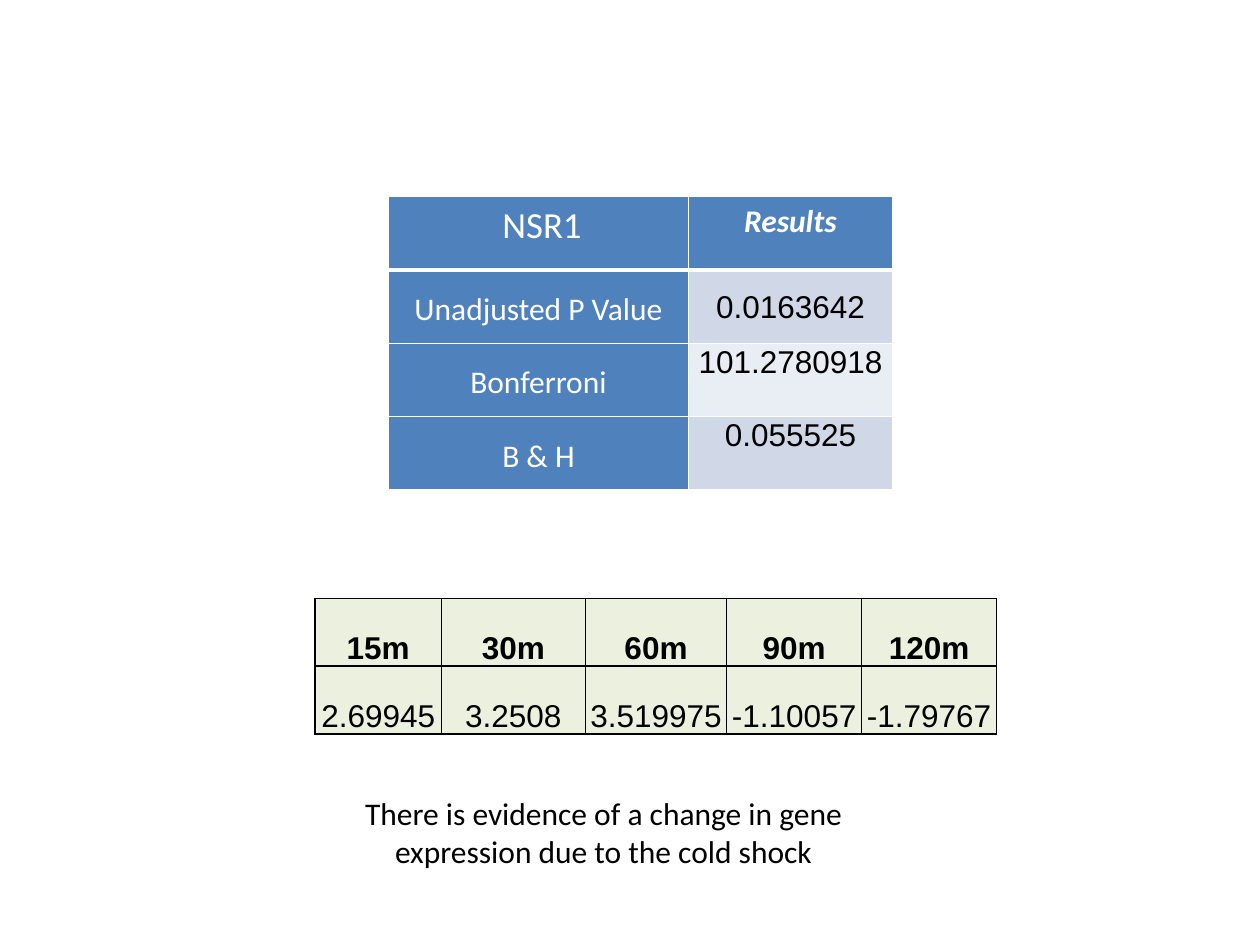
import pptx
import pptx.util
import pptx.oxml
import pptx.oxml.ns
from pptx.dml.color import RGBColor
from pptx.enum.text import MSO_ANCHOR, PP_ALIGN
from pptx.util import Cm, Pt

WHITE = RGBColor(0xFF, 0xFF, 0xFF)
BLACK = RGBColor(0x00, 0x00, 0x00)
BLUE = RGBColor(0x4F, 0x81, 0xBD)
BAND_DARK = RGBColor(0xD0, 0xD8, 0xE8)
BAND_LIGHT = RGBColor(0xE9, 0xED, 0xF4)
GREEN = RGBColor(0xEB, 0xF1, 0xDE)

LABEL_INSETS = (0.18, 0, 0.18, 0)
VALUE_INSETS = (0.03, 0.03, 0.03, 0)


class Deck:
    def __init__(self, width, height):
        self.prs = pptx.Presentation()
        self.prs.slide_width, self.prs.slide_height = Cm(width), Cm(height)
        self.s = self.prs.slides.add_slide(self.prs.slide_layouts[6])

    def run(self, p, text, font="Calibri", size=18, color=BLACK, bold=False, italic=False):
        r = p.add_run()
        r.text = text
        f = r.font
        f.name, f.size, f.bold, f.italic = font, Pt(size), bold, italic
        f.color.rgb = color

    def table(self, left, top, widths, row_height, rows):
        shape = self.s.shapes.add_table(rows, len(widths), Cm(left), Cm(top),
                                        Cm(sum(widths)), Cm(row_height * rows))
        tbl = shape.table
        for col, width in zip(tbl.columns, widths):
            col.width = Cm(width)
        for row in tbl.rows:
            row.height = Cm(row_height)
        return tbl

    def cell(self, cell, fill, line, anchor, insets, spacing=1.0, bottom=1):
        """Style a table cell and return its centred paragraph."""
        for side, width in (("L", 1), ("R", 1), ("T", 1), ("B", bottom)):
            cell._tc.get_or_add_tcPr().append(pptx.oxml.parse_xml(
                f'<a:ln{side} {pptx.oxml.ns.nsdecls("a")} w="{Pt(width)}">'
                f'<a:solidFill><a:srgbClr val="{line}"/></a:solidFill></a:ln{side}>'))
        cell.fill.solid()
        cell.fill.fore_color.rgb = fill
        cell.vertical_anchor = anchor
        (cell.margin_left, cell.margin_top,
         cell.margin_right, cell.margin_bottom) = map(Cm, insets)
        p = cell.text_frame.paragraphs[0]
        p.alignment, p.line_spacing = PP_ALIGN.CENTER, spacing
        return p

    def text(self, left, top, width, height, text):
        tf = self.s.shapes.add_textbox(Cm(left), Cm(top), Cm(width), Cm(height)).text_frame
        tf.word_wrap = True
        p = tf.paragraphs[0]
        p.alignment = PP_ALIGN.CENTER
        self.run(p, text)


def add_p_values(deck):
    tbl = deck.table(7.83, 3.96, (6.05, 4.11), 1.48, 4)
    header = [deck.cell(tbl.cell(0, c), BLUE, WHITE, MSO_ANCHOR.TOP, LABEL_INSETS, 1.15, 3)
              for c in range(2)]
    deck.run(header[0], "\N{NO-BREAK SPACE}")
    deck.run(header[0], "NSR1", size=21, color=WHITE)
    deck.run(header[1], "Results", color=WHITE, bold=True, italic=True)

    results = (
        ("Unadjusted P Value", "0.0163642", BAND_DARK, MSO_ANCHOR.MIDDLE),
        ("Bonferroni", "101.2780918", BAND_LIGHT, MSO_ANCHOR.TOP),
        ("B & H", "0.055525", BAND_DARK, MSO_ANCHOR.TOP),
    )
    for i, (label, value, band, anchor) in enumerate(results, 1):
        p = deck.cell(tbl.cell(i, 0), BLUE, WHITE, MSO_ANCHOR.MIDDLE, LABEL_INSETS, 1.15)
        deck.run(p, label, color=WHITE)
        p = deck.cell(tbl.cell(i, 1), band, WHITE, anchor, VALUE_INSETS)
        deck.run(p, value, "Arial")


def add_time_course(deck):
    rows = (("15m", "30m", "60m", "90m", "120m"),
            ("2.69945", "3.2508", "3.519975", "-1.10057", "-1.79767"))
    tbl = deck.table(6.35, 12.06, (2.55, 2.9, 2.85, 2.72, 2.72), 1.37, len(rows))
    for i, row in enumerate(rows):
        for j, value in enumerate(row):
            p = deck.cell(tbl.cell(i, j), GREEN, BLACK, MSO_ANCHOR.BOTTOM, VALUE_INSETS)
            deck.run(p, value, "Arial", bold=i == 0)


def main():
    deck = Deck(25.4, 19.05)
    add_p_values(deck)
    add_time_course(deck)
    deck.text(5.72, 15.88, 12.9, 1.8,
              "There is evidence of a change in gene expression due to the cold shock")
    deck.prs.save("out.pptx")


if __name__ == "__main__":
    main()
